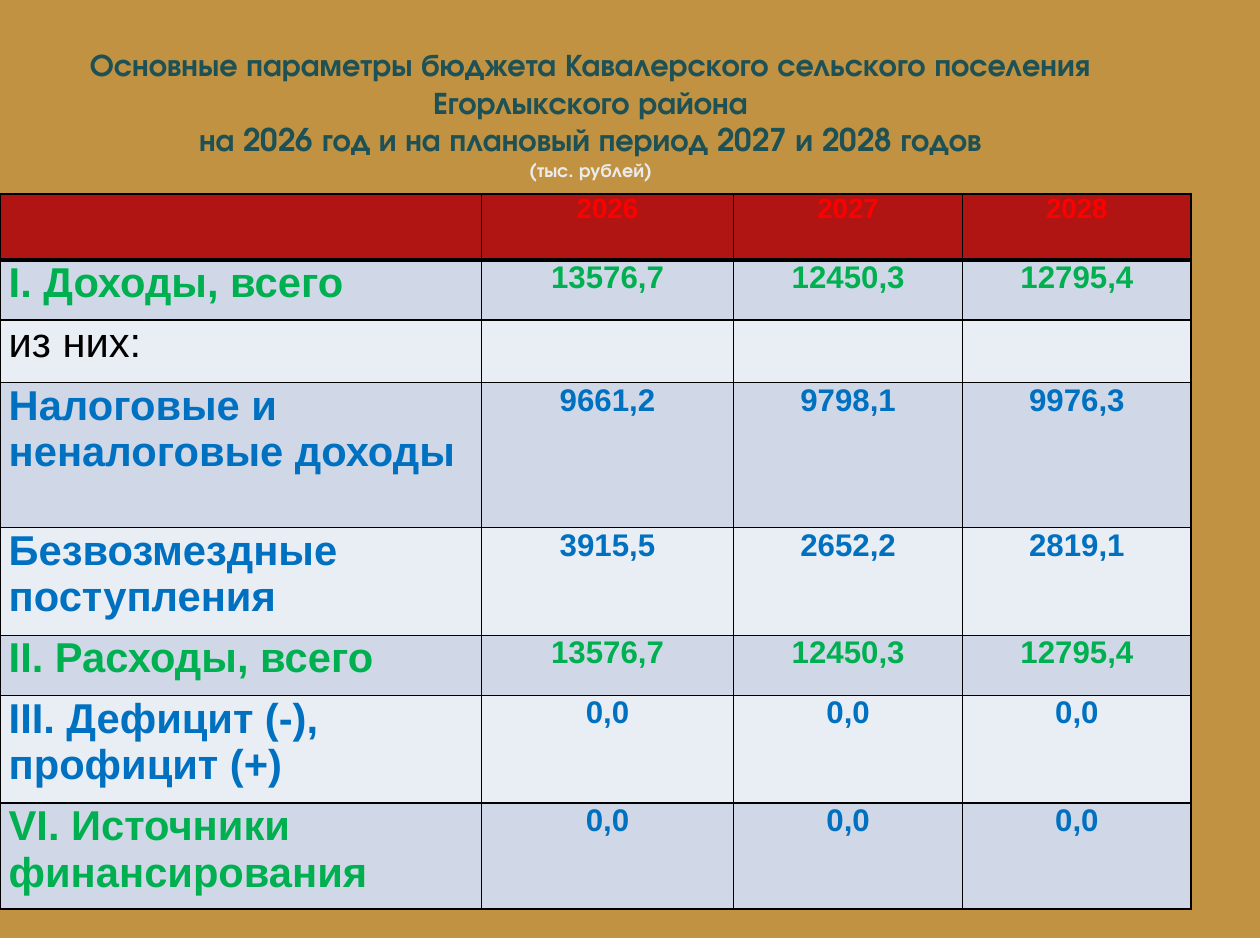
"""Build a slide with the main budget parameters of a rural settlement."""
import dataclasses

import lxml.etree
import pptx
import pptx.dml.color
import pptx.enum.text
import pptx.oxml.ns
import pptx.util

Inches = pptx.util.Inches
Align = pptx.enum.text.PP_ALIGN
Anchor = pptx.enum.text.MSO_ANCHOR


@dataclasses.dataclass(frozen=True)
class Theme:
    """Colours, fonts and type sizes of the slide."""
    background: str = "C09241"
    heading: str = "1E5155"
    unit: str = "EBEBEB"
    header_fill: str = "B01513"
    year: str = "FF0000"
    bands: tuple = ("D0D8E8", "E9EDF4")
    total: str = "00B050"
    detail: str = "0070C0"
    plain: str = "000000"
    border: str = "000000"
    heading_font: str = "TeX Gyre Adventor"
    table_font: str = "Arial"
    heading_size: int = 18
    unit_size: int = 11
    year_size: int = 16
    label_size: int = 24
    value_size: int = 18
    thin: int = 1
    thick: int = 3


THEME = Theme()
HEADING = (
    "Основные параметры бюджета Кавалерского сельского поселения Егорлыкского района",
    "на 2026 год и на плановый период 2027 и 2028 годов",
)
UNIT = "(тыс. рублей)"
YEARS = ("2026", "2027", "2028")
COLUMN_WIDTHS = (3.85, 2.02, 1.83, 1.83)
HEADER_HEIGHT = 0.53
BUDGET = (
    (0.48, "I. Доходы, всего", THEME.total, ("13576,7", "12450,3", "12795,4"), THEME.total),
    (0.5, "из них:", THEME.plain, ("", "", ""), THEME.plain),
    (1.16, "Налоговые и неналоговые доходы", THEME.detail,
     ("9661,2", "9798,1", "9976,3"), THEME.detail),
    (0.86, "Безвозмездные поступления", THEME.detail,
     ("3915,5", "2652,2", "2819,1"), THEME.detail),
    (0.48, "II. Расходы, всего", THEME.total, ("13576,7", "12450,3", "12795,4"), THEME.total),
    (0.86, "III. Дефицит (-), профицит (+)", THEME.detail, ("0,0", "0,0", "0,0"), THEME.detail),
    (0.85, "VI. Источники финансирования", THEME.total, ("0,0", "0,0", "0,0"), THEME.detail),
)


def apply_format(target, values):
    """Set each named attribute of the target."""
    for name, value in values.items():
        setattr(target, name, value)


def paint(fill, colour):
    """Give a fill one solid colour."""
    fill.solid()
    fill.fore_color.rgb = pptx.dml.color.RGBColor.from_string(colour)


def add_run(paragraph, text, family, size, colour, bold=True):
    """Append formatted text to a paragraph."""
    run = paragraph.add_run()
    run.text = text
    apply_format(run.font, {"name": family, "size": pptx.util.Pt(size), "bold": bold})
    run.font.color.rgb = pptx.dml.color.RGBColor.from_string(colour)


def add_heading(slide):
    """Add the centred heading with its unit of measure."""
    box = slide.shapes.add_textbox(Inches(0), Inches(0.28), Inches(9.45), Inches(1.25))
    apply_format(box.text_frame, {"word_wrap": True, "vertical_anchor": Anchor.MIDDLE})
    paragraph = box.text_frame.paragraphs[0]
    paragraph.alignment = Align.CENTER
    for line in HEADING:
        add_run(paragraph, line, THEME.heading_font, THEME.heading_size, THEME.heading)
        paragraph.add_line_break()
    add_run(paragraph, UNIT, THEME.heading_font, THEME.unit_size, THEME.unit)


def add_borders(cell, top, bottom):
    """Draw the four cell borders, with the given top and bottom widths."""
    properties = cell._tc.get_or_add_tcPr()
    qualify = pptx.oxml.ns.qn
    widths = {"lnL": THEME.thin, "lnR": THEME.thin, "lnT": top, "lnB": bottom}
    for position, (side, width) in enumerate(widths.items()):
        line = lxml.etree.Element(qualify(f"a:{side}"), w=str(pptx.util.Pt(width)))
        solid = lxml.etree.SubElement(line, qualify("a:solidFill"))
        lxml.etree.SubElement(solid, qualify("a:srgbClr"), val=THEME.border)
        properties.insert(position, line)


def fill_cell(cell, text, size, colour, fill, alignment, bold=True):
    """Set the text, margins and fill of one table cell."""
    apply_format(cell, {
        "margin_left": Inches(0.07), "margin_right": Inches(0.07),
        "margin_top": 0, "margin_bottom": 0, "vertical_anchor": Anchor.TOP,
    })
    paint(cell.fill, fill)
    paragraph = cell.text_frame.paragraphs[0]
    paragraph.alignment = alignment
    if text:
        add_run(paragraph, text, THEME.table_font, size, colour, bold)


def add_budget_table(slide):
    """Add the table of income, spending and balance by year."""
    heights = (HEADER_HEIGHT, *(entry[0] for entry in BUDGET))
    budget = slide.shapes.add_table(
        len(heights), len(COLUMN_WIDTHS), Inches(0), Inches(1.55),
        Inches(sum(COLUMN_WIDTHS)), Inches(sum(heights))).table
    apply_format(budget, {"first_row": False, "horz_banding": False})
    for column, width in zip(budget.columns, COLUMN_WIDTHS):
        column.width = Inches(width)
    for row, height in zip(budget.rows, heights):
        row.height = Inches(height)

    for column, year in enumerate(("", *YEARS)):
        fill_cell(budget.cell(0, column), year, THEME.year_size, THEME.year,
                  THEME.header_fill, Align.CENTER)
    for row, (_, label, label_colour, amounts, amount_colour) in enumerate(BUDGET, 1):
        band = THEME.bands[(row - 1) % 2]
        fill_cell(budget.cell(row, 0), label, THEME.label_size, label_colour, band,
                  Align.LEFT, label_colour != THEME.plain)
        for column, amount in enumerate(amounts, 1):
            fill_cell(budget.cell(row, column), amount, THEME.value_size, amount_colour,
                      band, Align.CENTER)

    for index, row in enumerate(budget.rows):
        top = THEME.thick if index == 1 else THEME.thin
        bottom = THEME.thick if index == 0 else THEME.thin
        for cell in row.cells:
            add_borders(cell, top, bottom)


def main():
    """Create and save the presentation."""
    deck = pptx.Presentation()
    apply_format(deck, {"slide_width": Inches(10.08), "slide_height": Inches(7.5)})
    slide = deck.slides.add_slide(deck.slide_layouts[6])
    paint(slide.background.fill, THEME.background)
    add_heading(slide)
    add_budget_table(slide)
    deck.save("out.pptx")


if __name__ == "__main__":
    main()
